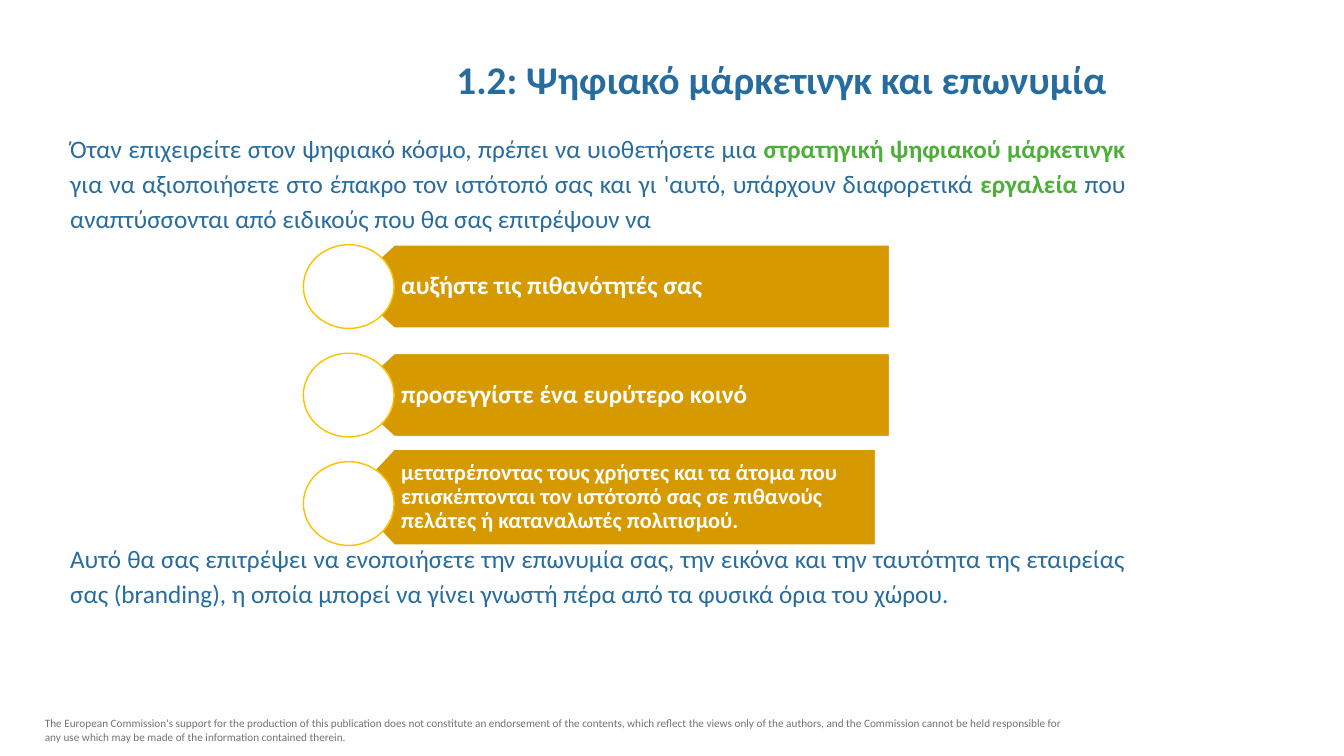
from dataclasses import dataclass

import pptx
import pptx.dml.color
import pptx.enum.shapes
import pptx.enum.text
import pptx.util

Pt = pptx.util.Pt
ALIGN = pptx.enum.text.PP_ALIGN
ANCHOR = pptx.enum.text.MSO_ANCHOR


@dataclass(frozen=True)
class Theme:
    font: str = "Calibri"
    blue: str = "266C9F"
    green: str = "4EAE3A"
    grey: str = "767171"
    white: str = "FFFFFF"
    ochre: str = "D69900"
    gold: str = "FFC000"
    title: float = 28
    body: float = 18
    dense: float = 16
    footer: float = 8


THEME = Theme()

INTRO = [
    ("Όταν επιχειρείτε στον ψηφιακό κόσμο, πρέπει να υιοθετήσετε μια ", False),
    ("στρατηγική ψηφιακού μάρκετινγκ ", True),
    ("για να αξιοποιήσετε στο έπακρο τον ιστότοπό σας και γι 'αυτό, "
     "υπάρχουν διαφορετικά ", False),
    ("εργαλεία", True),
    (" που αναπτύσσονται από ειδικούς που θα σας επιτρέψουν να", False),
]
CLOSING = [
    ("Αυτό θα σας επιτρέψει να ενοποιήσετε την επωνυμία σας, την εικόνα και "
     "την ταυτότητα της εταιρείας σας (branding), η οποία μπορεί να γίνει "
     "γνωστή πέρα από τα φυσικά όρια του χώρου.", False),
]
# text, size, arrow width, arrow height
GOALS = [
    ("αυξήστε τις πιθανότητές σας", THEME.body, 386.6, 59.8),
    ("προσεγγίστε ένα ευρύτερο κοινό", THEME.body, 386.6, 59.8),
    ("μετατρέποντας τους χρήστες και τα άτομα που επισκέπτονται τον ιστότοπό "
     "σας σε πιθανούς πελάτες ή καταναλωτές πολιτισμού.",
     THEME.dense, 376.6, 69),
]
DISCLAIMER = (
    "The European Commission's support for the production of this publication "
    "does not constitute an endorsement of the contents, which reflect the "
    "views only of the authors, and the Commission cannot be held responsible "
    "for any use which may be made of the information contained therein.")


def rgb(value):
    return pptx.dml.color.RGBColor.from_string(value)


def style_run(r, size, color, bold=False):
    r.font.name = THEME.font
    r.font.size = Pt(size)
    r.font.bold = bold
    r.font.color.rgb = rgb(color)


def paint(sp, fill, line, width):
    sp.shadow.inherit = False
    sp.fill.solid()
    sp.fill.fore_color.rgb = rgb(fill)
    sp.line.color.rgb = rgb(line)
    sp.line.width = Pt(width)


def add_text_box(slide, x, y, w, h):
    tf = slide.shapes.add_textbox(Pt(x), Pt(y), Pt(w), Pt(h)).text_frame
    tf.word_wrap = True
    return tf


def add_title(slide, x, y, w, h):
    tf = add_text_box(slide, x, y, w, h)
    tf.vertical_anchor = ANCHOR.MIDDLE
    tf.text = "1.2: Ψηφιακό μάρκετινγκ και επωνυμία"
    p = tf.paragraphs[0]
    p.alignment = ALIGN.CENTER
    p.line_spacing = 1.15
    p.space_after = Pt(10)
    style_run(p.runs[0], THEME.title, THEME.blue, True)


def add_body(slide, parts, x, y, w, h):
    """Place a justified paragraph of (text, highlighted) parts."""
    tf = add_text_box(slide, x, y, w, h)
    p = tf.paragraphs[0]
    p.alignment = ALIGN.JUSTIFY
    p.line_spacing = 1.15
    for text, highlighted in parts:
        r = p.add_run()
        r.text = text
        style_run(r, THEME.body, THEME.green if highlighted else THEME.blue,
                  highlighted)


def add_goal(slide, goal, x, bottom, circle_w, circle_h):
    """Place a circle and its arrow, both resting on the same bottom."""
    text, size, w, h = goal
    tip, shoulder, top = x + circle_w / 2, x + circle_w, bottom - h
    right = tip + w
    builder = slide.shapes.build_freeform(Pt(right), Pt(bottom), scale=1.0)
    corners = [(shoulder, bottom), (tip, top + h / 2), (shoulder, top),
               (right, top)]
    builder.add_line_segments([(Pt(a), Pt(b)) for a, b in corners], close=True)
    sp = builder.convert_to_shape()
    paint(sp, THEME.ochre, THEME.white, 1.5)
    tf = sp.text_frame
    tf.word_wrap = True
    tf.vertical_anchor = ANCHOR.MIDDLE
    tf.margin_left = Pt(37.4)
    tf.text = text
    p = tf.paragraphs[0]
    p.alignment = ALIGN.LEFT
    p.line_spacing = 0.9
    style_run(p.runs[0], size, THEME.white, True)

    circle = slide.shapes.add_shape(
        pptx.enum.shapes.MSO_SHAPE.OVAL, Pt(x), Pt(bottom - circle_h),
        Pt(circle_w), Pt(circle_h))
    paint(circle, THEME.white, THEME.gold, 1)


def add_goals(slide, x, y, h):
    circle_w, circle_h = 64.8, 59.8
    pitch = (h - circle_h) / (len(GOALS) - 1)
    for i, goal in enumerate(GOALS):
        add_goal(slide, goal, x, y + i * pitch + circle_h, circle_w, circle_h)


def add_footer(slide, x, y, w, h):
    tf = add_text_box(slide, x, y, w, h)
    tf.text = DISCLAIMER
    style_run(tf.paragraphs[0].runs[0], THEME.footer, THEME.grey)


def main():
    prs = pptx.Presentation()
    prs.slide_width, prs.slide_height = Pt(960), Pt(540)
    slide = prs.slides.add_slide(prs.slide_layouts[6])
    add_footer(slide, 25, 508.3, 753, 26.6)
    add_title(slide, 175, 25.2, 766, 57)
    add_body(slide, INTRO, 43, 88.6, 768, 84)
    add_body(slide, CLOSING, 43, 381.5, 768, 60)
    add_goals(slide, 216.7, 174.8, 214.8)
    prs.save("out.pptx")


if __name__ == "__main__":
    main()
